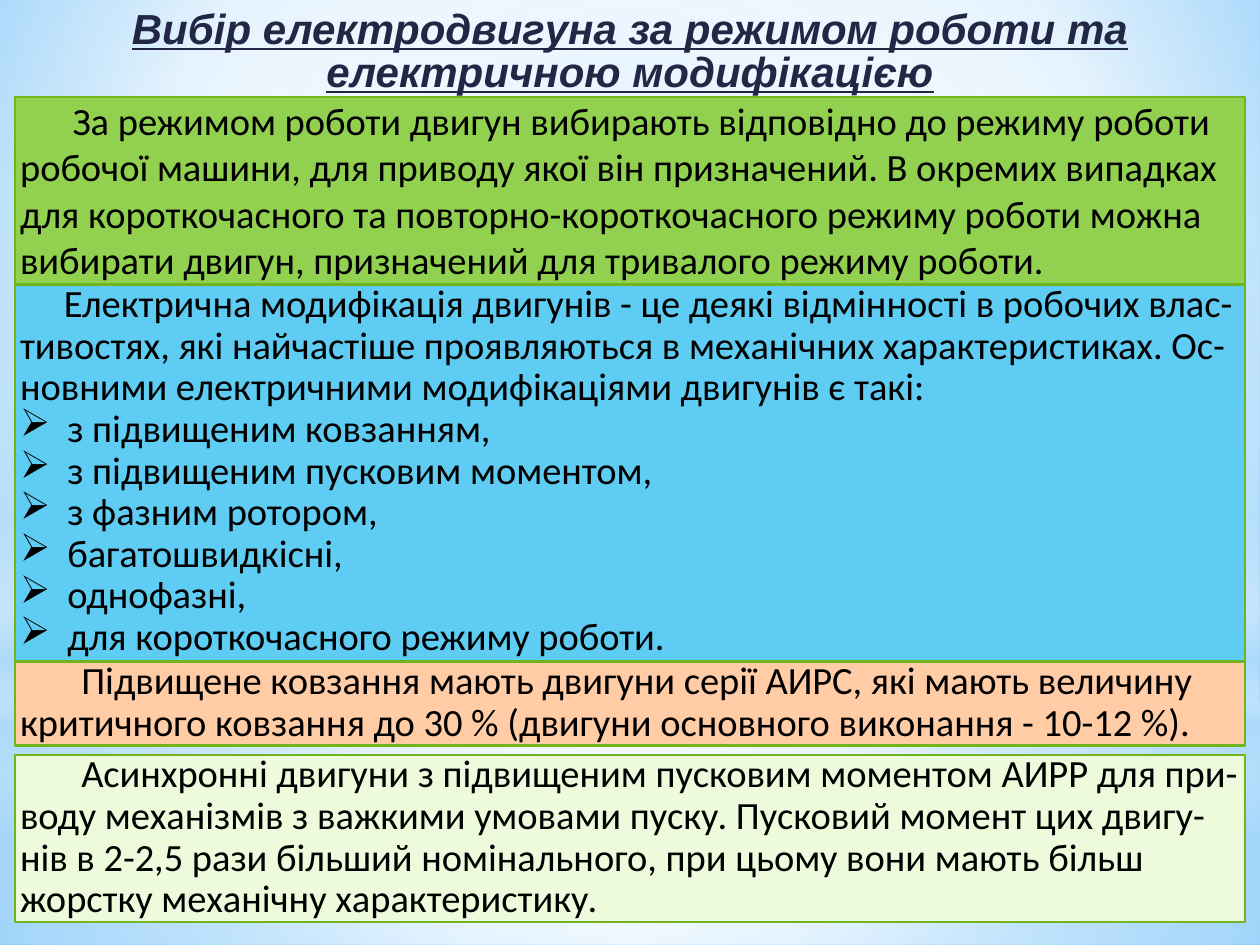
import pptx
import pptx.util
import pptx.dml.color
import pptx.enum.shapes
import pptx.enum.text
import pptx.oxml
import pptx.oxml.ns
import lxml.etree

Pt = pptx.util.Pt
qn = pptx.oxml.ns.qn
Kind = pptx.enum.shapes.MSO_SHAPE
Enum = pptx.enum.text

TITLE = "Вибір електродвигуна за режимом роботи та електричною модифікацією"
LIST = [
    "з підвищеним ковзанням,",
    "з підвищеним пусковим моментом,",
    "з фазним ротором,",
    "багатошвидкісні,",
    "однофазні,",
    "для короткочасного режиму роботи.",
]
MODES = ("За режимом роботи двигун вибирають відповідно до режиму роботи робочої машини, "
         "для приводу якої він призначений. В окремих випадках для короткочасного та "
         "повторно-короткочасного режиму роботи можна вибирати двигун, призначений для "
         "тривалого режиму роботи.")
KINDS = ("Електрична модифікація двигунів - це деякі відмінності в робочих влас-тивостях, "
         "які найчастіше проявляються в механічних характеристиках. Ос-новними електричними "
         "модифікаціями двигунів є такі:")
SLIP = ("Підвищене ковзання мають двигуни серії АИРС, які мають величину критичного "
        "ковзання до 30 % (двигуни основного виконання - 10-12 %).")
START = ("Асинхронні двигуни з підвищеним пусковим моментом АИРР для при-воду механізмів "
         "з важкими умовами пуску. Пусковий момент цих двигу-нів в 2-2,5 рази більший "
         "номінального, при цьому вони мають більш жорстку механічну характеристику.")

LEFT, WIDE = 8.6, 702.8
PANELS = [
    (55.6, 106.8, "92D050", 1, 30, MODES, []),
    (162.6, 215.4, "5ECCF3", 0.9, 25, KINDS, LIST),
    (378, 48, "FFCCA6", 0.9, 35, SLIP, []),
    (431.3, 95.8, "EDFBDC", 0.9, 35, START, []),
]

MID = (50, 50, 50, 50)
BACK = [(0, "9ED5FF", 100), (60, "FFFFFF", 100), (100, "5BB9FF", 100)]
GLOWS = [
    (Kind.RECTANGLE, 401.8, 138.2, MID,
     [(0, "FFFFFF", 91), (37, "FFFFFF", 76), (100, "B4DCFA", 79)]),
    (Kind.RECTANGLE, 0, 401.8, MID,
     [(0, "FFFFFF", 89), (48, "FFFFFF", 62), (100, "B4DCFA", 79)]),
    (Kind.RECTANGLE, 296.6, 180, None,
     [(0, "FFFFFF", 0), (29, "FFFFFF", 30), (45, "B4DCFA", 40),
      (55, "FFFFFF", 26), (65, "B4DCFA", 60), (100, "FFFFFF", 0)]),
    (Kind.OVAL, 126, 401.8, MID, [(0, "FFFFFF", 100), (56, "FFFFFF", 0)]),
]


def tint(code):
    return pptx.dml.color.RGBColor.from_string(code)


def add(node, tag, **attrs):
    sub = lxml.etree.SubElement(node, qn(tag))
    for key, value in attrs.items():
        sub.set(key, str(value))
    return sub


def blend(root, fill, stops, rect):
    fill.solid()
    old = root.find(".//" + qn("a:solidFill"))
    grad = pptx.oxml.parse_xml(
        '<a:gradFill xmlns:a="http://schemas.openxmlformats.org/drawingml/2006/main"/>')
    row = add(grad, "a:gsLst")
    for pos, code, alpha in stops:
        color = add(add(row, "a:gs", pos=pos * 1000), "a:srgbClr", val=code)
        add(color, "a:alpha", val=alpha * 1000)
    if rect:
        sides = {side: size * 1000 for side, size in zip("ltrb", rect)}
        add(add(grad, "a:path", path="circle"), "a:fillToRect", **sides)
    else:
        add(grad, "a:lin", ang=90 * 60000, scaled=0)
    old.getparent().replace(old, grad)


def place(shape, top, high):
    shape.left, shape.top = Pt(LEFT), Pt(top)
    shape.width, shape.height = Pt(WIDE), Pt(high)


def frame(shape, pad):
    text = shape.text_frame
    text.word_wrap = True
    text.auto_size = Enum.MSO_AUTO_SIZE.NONE
    text.vertical_anchor = Enum.MSO_ANCHOR.TOP
    text.margin_left = text.margin_right = Pt(pad)
    text.margin_top = text.margin_bottom = 0
    return text


def style(para, font, size, code, gap, align):
    para.font.name, para.font.size = font, Pt(size)
    para.font.color.rgb = tint(code)
    para.line_spacing, para.alignment = gap, align
    para.space_before = para.space_after = Pt(0)


def indent(para, left, first, mark=None):
    props = para._p.get_or_add_pPr()
    props.set("marL", str(Pt(left)))
    props.set("indent", str(Pt(first)))
    if mark:
        add(props, "a:buFont", typeface="Wingdings", pitchFamily=2, charset=2)
        add(props, "a:buChar", char=mark)
    else:
        add(props, "a:buNone")


def panel(shape, top, high, code, gap, first, lead, items):
    place(shape, top, high)
    shape.fill.solid()
    shape.fill.fore_color.rgb = tint(code)
    shape.line.color.rgb = tint("72B41D")
    shape.line.width = Pt(1.25)
    text = frame(shape, 2.9)
    text.text = "\n".join([lead] + items)
    for para in text.paragraphs:
        style(para, "Calibri", 22, "000000", gap, Enum.PP_ALIGN.LEFT)
    indent(text.paragraphs[0], 0, first)
    for para in text.paragraphs[1:]:
        indent(para, 27, -27, "Ø")


def main():
    deck = pptx.Presentation()
    deck.slide_width, deck.slide_height = Pt(720), Pt(540)
    slide = deck.slides.add_slide(deck.slide_layouts[1])
    shapes = slide.shapes
    title, body = slide.placeholders
    tree = title._element.getparent()
    blend(slide._element, slide.background.fill, BACK, (20, 10, 20, 60))

    for kind, top, high, rect, stops in GLOWS:
        glow = shapes.add_shape(kind, 0, Pt(top), Pt(720), Pt(high))
        glow.shadow.inherit = False
        glow.line.fill.background()
        blend(glow._element, glow.fill, stops, rect)

    tree.append(title._element)
    place(title, 5.8, 49.7)
    text = frame(title, 0)
    text.text = TITLE
    head = text.paragraphs[0]
    style(head, "Arial", 24, "212745", 0.85, Enum.PP_ALIGN.CENTER)
    head.font.bold = head.font.italic = head.font.underline = True

    for row in PANELS:
        if row[-1]:
            shape = body
            tree.append(body._element)
        else:
            shape = shapes.add_shape(Kind.RECTANGLE, 0, 0, 0, 0)
            shape.shadow.inherit = False
        panel(shape, *row)

    deck.save("out.pptx")


if __name__ == "__main__":
    main()
